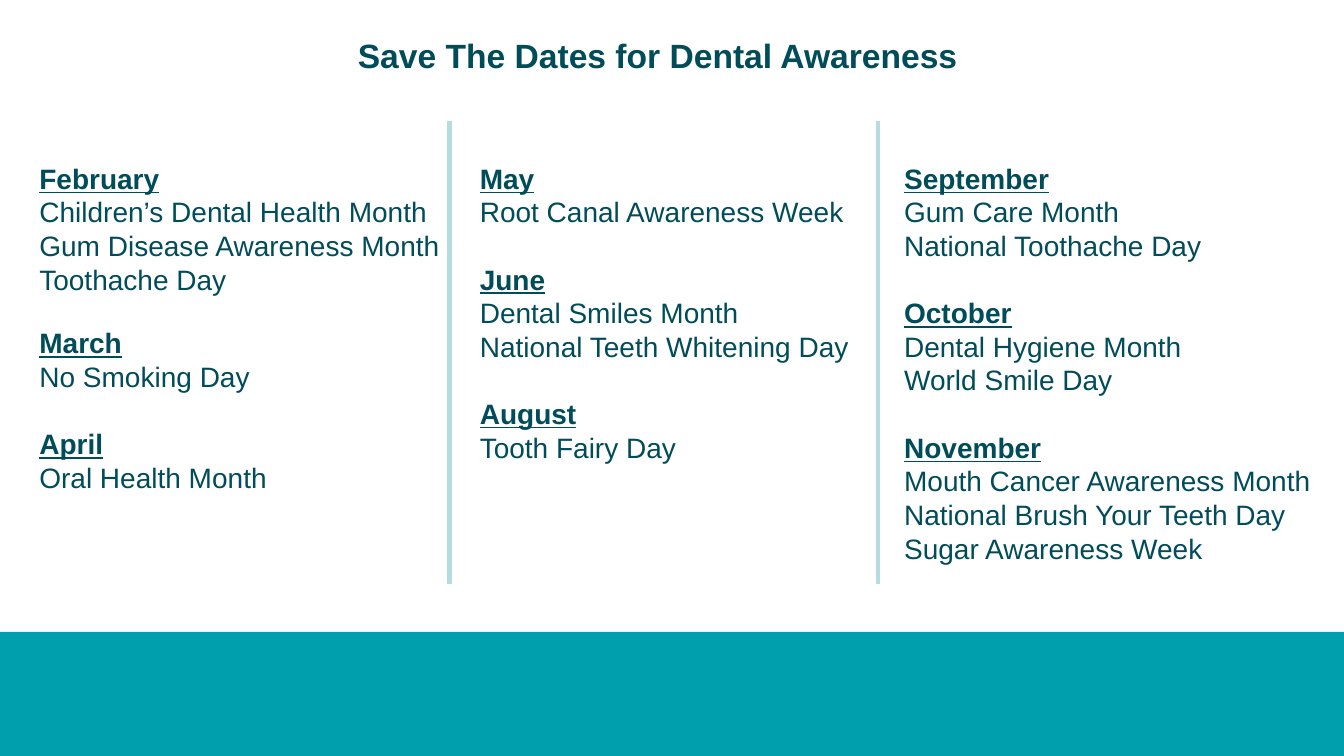
from lxml.etree import SubElement
from pptx import Presentation
from pptx.dml.color import RGBColor
from pptx.enum.shapes import MSO_CONNECTOR, MSO_SHAPE
from pptx.enum.text import MSO_ANCHOR, MSO_AUTO_SIZE, PP_ALIGN
from pptx.oxml.ns import qn
from pptx.util import Pt

COLORS = {"ink": "004C59", "band": "009FAE", "divider": "B6DCDF", "page": "FFFFFF"}
FONT = "Arial"
COLUMNS = [
    ((20.9, 111.6, 302.4, 247), 21.6, [
        ("February", ["Children’s Dental Health Month", "Gum Disease Awareness Month", "Toothache Day"]),
        ("March", ["No Smoking Day"]),
        ("April", ["Oral Health Month"]),
    ]),
    ((335.5, 111.6, 280, 273.6), 24, [
        ("May", ["Root Canal Awareness Week"]),
        ("June", ["Dental Smiles Month", "National Teeth Whitening Day"]),
        ("August", ["Tooth Fairy Day"]),
    ]),
    ((638.6, 111.6, 317.5, 322.6), 24, [
        ("September", ["Gum Care Month", "National Toothache Day"]),
        ("October", ["Dental Hygiene Month", "World Smile Day"]),
        ("November", ["Mouth Cancer Awareness Month", "National Brush Your Teeth Day",
                      "Sugar Awareness Week"]),
    ]),
]


def color(name):
    """Return a named palette colour."""
    return RGBColor.from_string(COLORS[name])


def place(holder, box, wrap):
    """Move a placeholder into its box and return its emptied text frame."""
    holder.left, holder.top, holder.width, holder.height = map(Pt, box)
    frame = holder.text_frame
    frame.clear()
    frame.auto_size = MSO_AUTO_SIZE.NONE
    frame.word_wrap = wrap
    frame.vertical_anchor = MSO_ANCHOR.TOP
    frame.margin_left = frame.margin_right = Pt(7.2)
    frame.margin_top = frame.margin_bottom = Pt(3.6)
    return frame


def write_line(para, text, size, pitch, before=0, bold=False, underline=False):
    """Write one unbulleted left-aligned line."""
    properties = para._p.get_or_add_pPr()
    properties.set("marL", "0")
    properties.set("indent", "0")
    SubElement(properties, qn("a:buNone"))
    para.alignment = PP_ALIGN.LEFT
    para.line_spacing = Pt(pitch)
    para.space_before = Pt(before)
    para.space_after = Pt(0)
    span = para.add_run()
    span.text = text
    span.font.name = FONT
    span.font.size = Pt(size)
    span.font.bold = bold
    span.font.underline = underline
    span.font.color.rgb = color("ink")


def add_title(holder, box):
    """Write the page heading in its box."""
    frame = place(holder, box, False)
    write_line(frame.paragraphs[0], "Save The Dates for Dental Awareness", 24, 29, bold=True)


def add_months(holder, box, second_gap, months):
    """List months and their events in one column."""
    frame = place(holder, box, True)
    for index, (month, events) in enumerate(months):
        para = frame.add_paragraph() if index else frame.paragraphs[0]
        before = (0, second_gap, 24)[index]
        write_line(para, month, 20, 24, before, bold=True, underline=True)
        for event in events:
            write_line(frame.add_paragraph(), event, 20, 24)


def add_divider(page, x, top, bottom):
    """Draw a vertical rule between columns."""
    rule = page.shapes.add_connector(MSO_CONNECTOR.STRAIGHT, Pt(x), Pt(top), Pt(x), Pt(bottom))
    rule.line.color.rgb = color("divider")
    rule.line.width = Pt(3)
    SubElement(rule._element.spPr, qn("a:effectLst"))


def add_band(page, box):
    """Draw the solid footer band."""
    band = page.shapes.add_shape(MSO_SHAPE.RECTANGLE, *map(Pt, box))
    band.shadow.inherit = False
    band.fill.solid()
    band.fill.fore_color.rgb = color("band")
    band.line.fill.background()


def main():
    """Build and save the awareness calendar."""
    deck = Presentation()
    deck.slide_width, deck.slide_height = Pt(960), Pt(540)
    page = deck.slides.add_slide(deck.slide_layouts.get_by_name("Comparison"))
    page.background.fill.solid()
    page.background.fill.fore_color.rgb = color("page")
    title, *bodies = list(page.placeholders)
    add_title(title, (248.4, 20.9, 447.1, 36))
    for holder, (box, gap, months) in zip(bodies, COLUMNS):
        add_months(holder, box, gap, months)
    for spare in bodies[len(COLUMNS):]:
        spare._element.getparent().remove(spare._element)
    for x in (321.1, 627.1):
        add_divider(page, x, 86.4, 416.9)
    add_band(page, (0, 451.4, 960, 88.6))
    deck.save("out.pptx")


if __name__ == "__main__":
    main()
